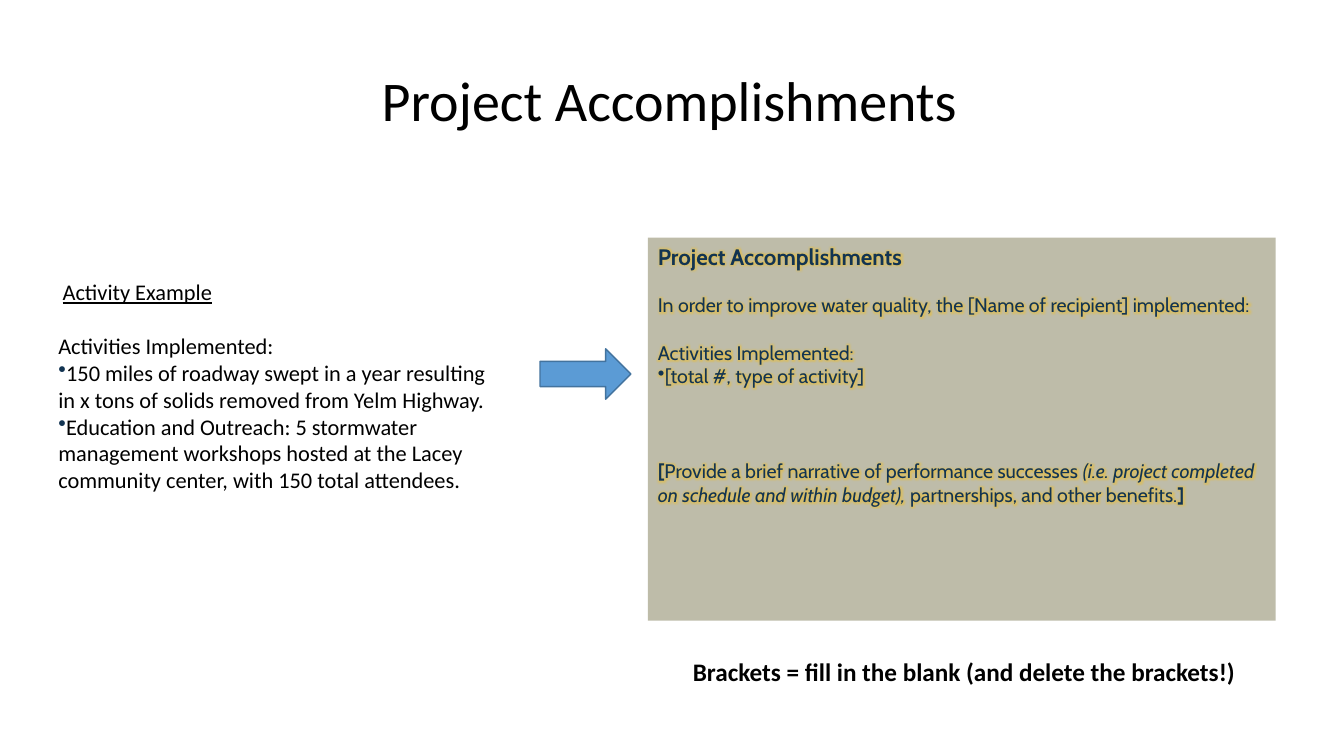
"""Build the Project Accomplishments slide with an example and a fill-in panel."""
from dataclasses import dataclass

from lxml.etree import SubElement
from pptx import Presentation
from pptx.dml.color import RGBColor
from pptx.enum.shapes import MSO_SHAPE
from pptx.enum.text import MSO_ANCHOR, MSO_AUTO_SIZE, PP_ALIGN
from pptx.oxml import parse_xml
from pptx.oxml.ns import nsdecls, qn
from pptx.text.text import TextFrame, _Paragraph, _Run
from pptx.util import Cm, Length, Pt


@dataclass(frozen=True)
class Theme:
    """Colours, fonts and type sizes of the slide."""
    black: str = "000000"
    navy: str = "123452"
    panel: str = "BEBCA9"
    glow: str = "FFC000"
    arrow: str = "5B9BD5"
    arrow_edge: str = "43739E"
    plain_font: str = "Calibri"
    panel_font: str = "Cabin"
    title: float = 40
    note: float = 18
    heading: float = 16
    body: float = 14


THEME = Theme()


@dataclass(frozen=True)
class Box:
    """Place and size in centimetres."""
    left: float
    top: float
    width: float
    height: float

    def lengths(self) -> tuple[Length, Length, Length, Length]:
        """Return the box as slide lengths."""
        return Cm(self.left), Cm(self.top), Cm(self.width), Cm(self.height)


@dataclass(frozen=True)
class Style:
    """Type style of a run."""
    font: str
    color: str
    size: float
    glow: bool = False


@dataclass(frozen=True)
class Piece:
    """Stretch of text with its emphasis."""
    text: str
    bold: bool = False
    italic: bool = False
    underline: bool = False


@dataclass(frozen=True)
class Line:
    """Paragraph with its pieces, gap above in points and indent in centimetres."""
    style: Style
    pieces: tuple[Piece, ...]
    gap: float = 0
    indent: float = 0
    bullet: bool = False


TITLE = Style(THEME.plain_font, THEME.black, THEME.title)
NOTE = Style(THEME.plain_font, THEME.black, THEME.note)
EXAMPLE = Style(THEME.plain_font, THEME.black, THEME.heading)
PANEL_HEADING = Style(THEME.panel_font, THEME.navy, THEME.heading, True)
PANEL_BODY = Style(THEME.panel_font, THEME.navy, THEME.body, True)
EXAMPLE_ROW = 19.5
PANEL_ROW = 17

EXAMPLE_LINES = (
    Line(EXAMPLE, (Piece("Activity Example", underline=True),), indent=0.11),
    Line(EXAMPLE, (Piece("Activities Implemented:"),), gap=EXAMPLE_ROW),
    Line(EXAMPLE, (Piece("150 miles of roadway swept in a year resulting in x tons of "
                         "solids removed from Yelm Highway."),), bullet=True),
    Line(EXAMPLE, (Piece("Education and Outreach: 5 stormwater management workshops hosted at "
                         "the Lacey community center, with 150 total attendees."),), bullet=True),
)
PANEL_LINES = (
    Line(PANEL_HEADING, (Piece("Project Accomplishments", bold=True),)),
    Line(PANEL_BODY, (Piece("In order to improve water quality, the [Name of recipient] "
                            "implemented:"),), gap=PANEL_ROW),
    Line(PANEL_BODY, (Piece("Activities Implemented:"),), gap=PANEL_ROW),
    Line(PANEL_BODY, (Piece("[total #, type of activity]"),), bullet=True),
    Line(PANEL_BODY, (
        Piece("[", bold=True),
        Piece("Provide a brief narrative of performance successes "),
        Piece("(i.e. project completed on schedule and within budget), ", italic=True),
        Piece("partnerships, and other benefits."),
        Piece("]", bold=True),
    ), gap=3 * PANEL_ROW),
)
NOTE_LINES = (
    Line(NOTE, (Piece("Brackets = fill in the blank (and delete the brackets!)", bold=True),)),
)
TITLE_LINES = (Line(TITLE, (Piece("Project Accomplishments"),)),)


def format_run(run: _Run, piece: Piece, style: Style) -> None:
    """Apply the style and emphasis to a run."""
    font = run.font
    font.name, font.size = style.font, Pt(style.size)
    font.bold, font.italic, font.underline = piece.bold, piece.italic, piece.underline
    font.color.rgb = RGBColor.from_string(style.color)
    if style.glow:
        run._r.rPr.find(qn("a:solidFill")).addnext(parse_xml(
            f'<a:effectLst {nsdecls("a")}><a:glow rad="63500"><a:srgbClr val="{THEME.glow}">'
            '<a:alpha val="40000"/></a:srgbClr></a:glow></a:effectLst>'))


def add_bullet(paragraph: _Paragraph) -> None:
    """Give a paragraph a navy bullet close to its text."""
    properties = paragraph._p.get_or_add_pPr()
    properties.set("marL", "0")
    properties.set("indent", "0")
    color = SubElement(properties, qn("a:buClr"))
    SubElement(color, qn("a:srgbClr")).set("val", THEME.navy)
    SubElement(properties, qn("a:buChar")).set("char", "•")


def write(frame: TextFrame, lines: tuple[Line, ...], align: PP_ALIGN = PP_ALIGN.LEFT,
          anchor: MSO_ANCHOR = MSO_ANCHOR.TOP, wrap: bool = True) -> None:
    """Fill a text frame with lines."""
    frame.word_wrap, frame.vertical_anchor = wrap, anchor
    frame.auto_size = MSO_AUTO_SIZE.NONE
    for index, line in enumerate(lines):
        paragraph = frame.add_paragraph() if index else frame.paragraphs[0]
        paragraph.alignment = align
        paragraph.space_before = Pt(line.gap)
        if line.indent:
            paragraph._p.get_or_add_pPr().set("marL", str(Cm(line.indent)))
        if line.bullet:
            add_bullet(paragraph)
        for piece in line.pieces:
            run = paragraph.add_run()
            run.text = piece.text
            format_run(run, piece, line.style)


def main() -> None:
    """Create the slide and save it."""
    deck = Presentation()
    deck.slide_width, deck.slide_height = Cm(33.87), Cm(19.05)
    slide = deck.slides.add_slide(deck.slide_layouts[5])
    shapes = slide.shapes

    title = shapes.title
    title.left, title.top, title.width, title.height = Box(2.26, 0.76, 29.21, 3.68).lengths()
    write(title.text_frame, TITLE_LINES, PP_ALIGN.CENTER, MSO_ANCHOR.MIDDLE)
    title.text_frame.paragraphs[0].line_spacing = 0.9

    panel = shapes.add_shape(MSO_SHAPE.RECTANGLE, *Box(16.33, 5.99, 15.82, 9.65).lengths())
    panel.shadow.inherit = False
    panel.fill.solid()
    panel.fill.fore_color.rgb = RGBColor.from_string(THEME.panel)
    panel.line.fill.background()
    write(panel.text_frame, PANEL_LINES)

    example = shapes.add_textbox(*Box(1.22, 6.88, 11.68, 6.32).lengths())
    write(example.text_frame, EXAMPLE_LINES)

    arrow = shapes.add_shape(MSO_SHAPE.RIGHT_ARROW, *Box(13.61, 8.79, 2.29, 1.27).lengths())
    arrow.shadow.inherit = False
    arrow.fill.solid()
    arrow.fill.fore_color.rgb = RGBColor.from_string(THEME.arrow)
    arrow.line.color.rgb = RGBColor.from_string(THEME.arrow_edge)
    arrow.line.width = Pt(1)

    note = shapes.add_textbox(*Box(17.15, 16.41, 14.3, 1.02).lengths())
    write(note.text_frame, NOTE_LINES, PP_ALIGN.CENTER, wrap=False)

    deck.save("out.pptx")


if __name__ == "__main__":
    main()
